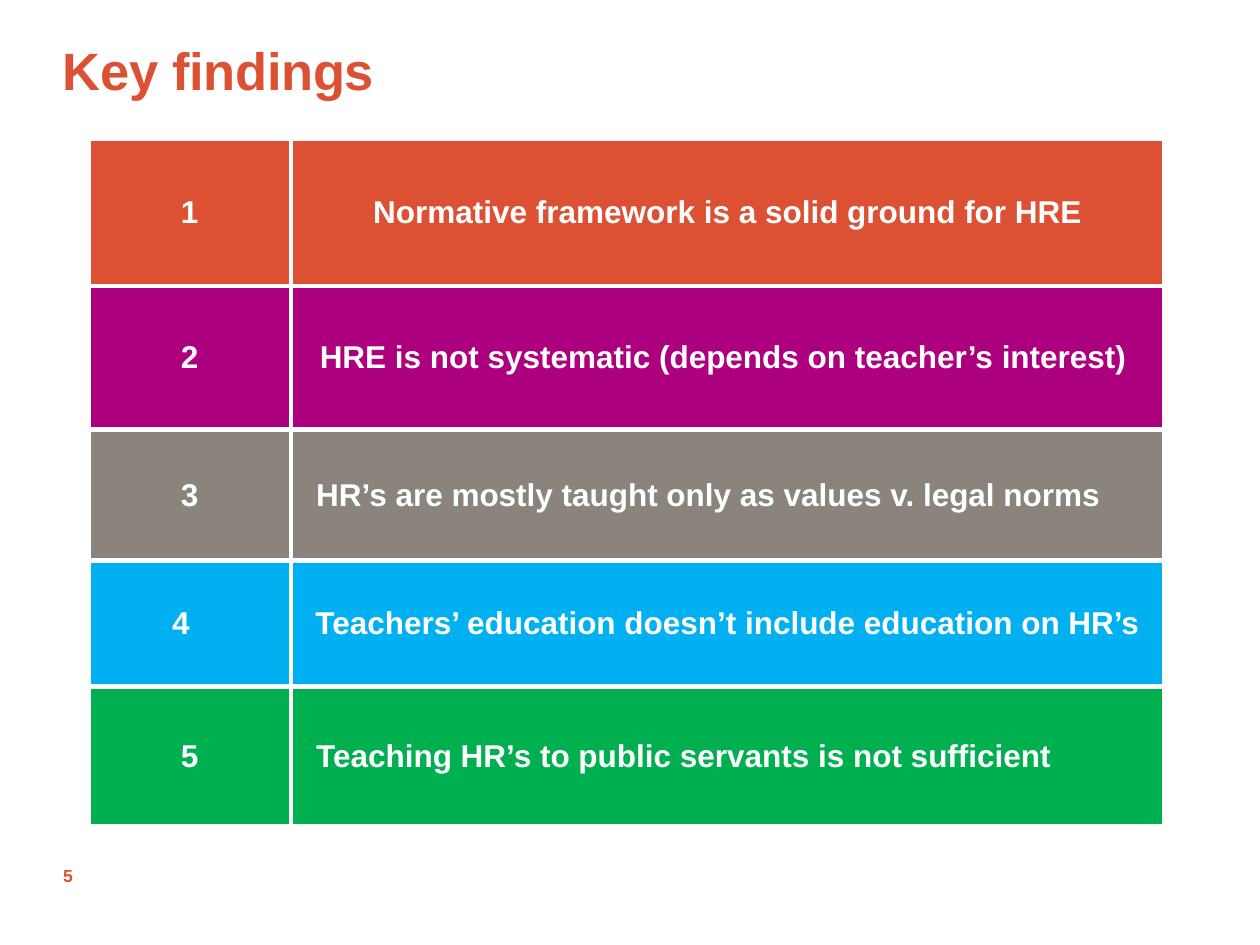
from dataclasses import dataclass

from lxml.etree import SubElement
from pptx import Presentation
from pptx.dml.color import RGBColor
from pptx.enum.text import MSO_ANCHOR, PP_ALIGN
from pptx.oxml import parse_xml
from pptx.oxml.ns import nsdecls, qn
from pptx.util import Inches, Pt

COLORS = {
    "white": "FFFFFF",
    "orange": "DC5034",
    "magenta": "AC007F",
    "taupe": "8A847C",
    "blue": "00B0F0",
    "green": "00B050",
}
FONT = "Arial"
BORDER_PT = 3
COLUMN_WIDTHS = (1.61, 6.93)
TABLE_LEFT, TABLE_TOP = 0.7, 1.1
LEFT_MARGIN = 0.5


@dataclass(frozen=True)
class Finding:
    statement: str
    color: str
    height: float
    align: PP_ALIGN = PP_ALIGN.CENTER
    indent: float = 0
    number_right: float = 0
    statement_right: float = 0


FINDINGS = [
    Finding("Normative framework is a solid ground for HRE", "orange", 1.17),
    Finding("HRE is not systematic (depends on teacher’s interest)", "magenta", 1.14,
            statement_right=0.07),
    Finding("HR’s are mostly taught only as values v. legal norms", "taupe", 1.04,
            PP_ALIGN.LEFT, indent=0.2),
    Finding("Teachers’ education doesn’t include education on HR’s", "blue", 1,
            number_right=0.14),
    Finding("Teaching HR’s to public servants is not sufficient", "green", 1.11,
            PP_ALIGN.LEFT, indent=0.2),
]


def write(frame, text: str, size: float, color: str, align=PP_ALIGN.LEFT):
    """Put one bold line into a text frame and return its run."""
    frame.text = text
    paragraph = frame.paragraphs[0]
    paragraph.alignment = align
    run = paragraph.runs[0]
    run.font.name = FONT
    run.font.size = Pt(size)
    run.font.bold = True
    run.font.color.rgb = RGBColor.from_string(COLORS[color])
    return run


def add_label(slide, box: tuple, text: str, size: float, anchor: MSO_ANCHOR):
    frame = slide.shapes.add_textbox(*(Inches(v) for v in box)).text_frame
    frame.word_wrap = True
    frame.vertical_anchor = anchor
    frame.margin_left = frame.margin_right = 0
    frame.margin_top = frame.margin_bottom = 0
    return write(frame, text, size, "orange")


def add_borders(cell) -> None:
    properties = cell._tc.get_or_add_tcPr()
    for position, side in enumerate(("lnL", "lnR", "lnT", "lnB")):
        line = parse_xml(f'<a:{side} {nsdecls("a")} w="{Pt(BORDER_PT)}"/>')
        fill = SubElement(line, qn("a:solidFill"))
        SubElement(fill, qn("a:srgbClr"), val=COLORS["white"])
        properties.insert(position, line)


def fill_cell(cell, text: str, color: str, align=PP_ALIGN.CENTER,
              left: float = 0, right: float = 0) -> None:
    cell.margin_left, cell.margin_right = Inches(left), Inches(right)
    cell.margin_top = cell.margin_bottom = 0
    cell.vertical_anchor = MSO_ANCHOR.MIDDLE
    cell.fill.solid()
    cell.fill.fore_color.rgb = RGBColor.from_string(COLORS[color])
    add_borders(cell)
    write(cell.text_frame, text, 18, "white", align)


def add_findings(slide, findings: list[Finding]) -> None:
    table = slide.shapes.add_table(
        len(findings), len(COLUMN_WIDTHS), Inches(TABLE_LEFT), Inches(TABLE_TOP),
        Inches(sum(COLUMN_WIDTHS)), Inches(sum(f.height for f in findings)),
    ).table
    table.first_row = table.horz_banding = False
    for column, width in zip(table.columns, COLUMN_WIDTHS):
        column.width = Inches(width)
    for index, finding in enumerate(findings):
        table.rows[index].height = Inches(finding.height)
        fill_cell(table.cell(index, 0), str(index + 1), finding.color,
                  right=finding.number_right)
        fill_cell(table.cell(index, 1), finding.statement, finding.color,
                  finding.align, finding.indent, finding.statement_right)


def main() -> None:
    deck = Presentation()
    deck.slide_width, deck.slide_height = Inches(10), Inches(7.5)
    slide = deck.slides.add_slide(deck.slide_layouts[6])
    heading = add_label(slide, (LEFT_MARGIN, 0.3, 9, 1.16), "Key findings", 30,
                        MSO_ANCHOR.TOP)
    heading.font._element.set("spc", "-20")
    add_findings(slide, FINDINGS)
    add_label(slide, (LEFT_MARGIN, 6.75, 0.71, 0.4), "5", 10, MSO_ANCHOR.MIDDLE)
    deck.save("out.pptx")


if __name__ == "__main__":
    main()
